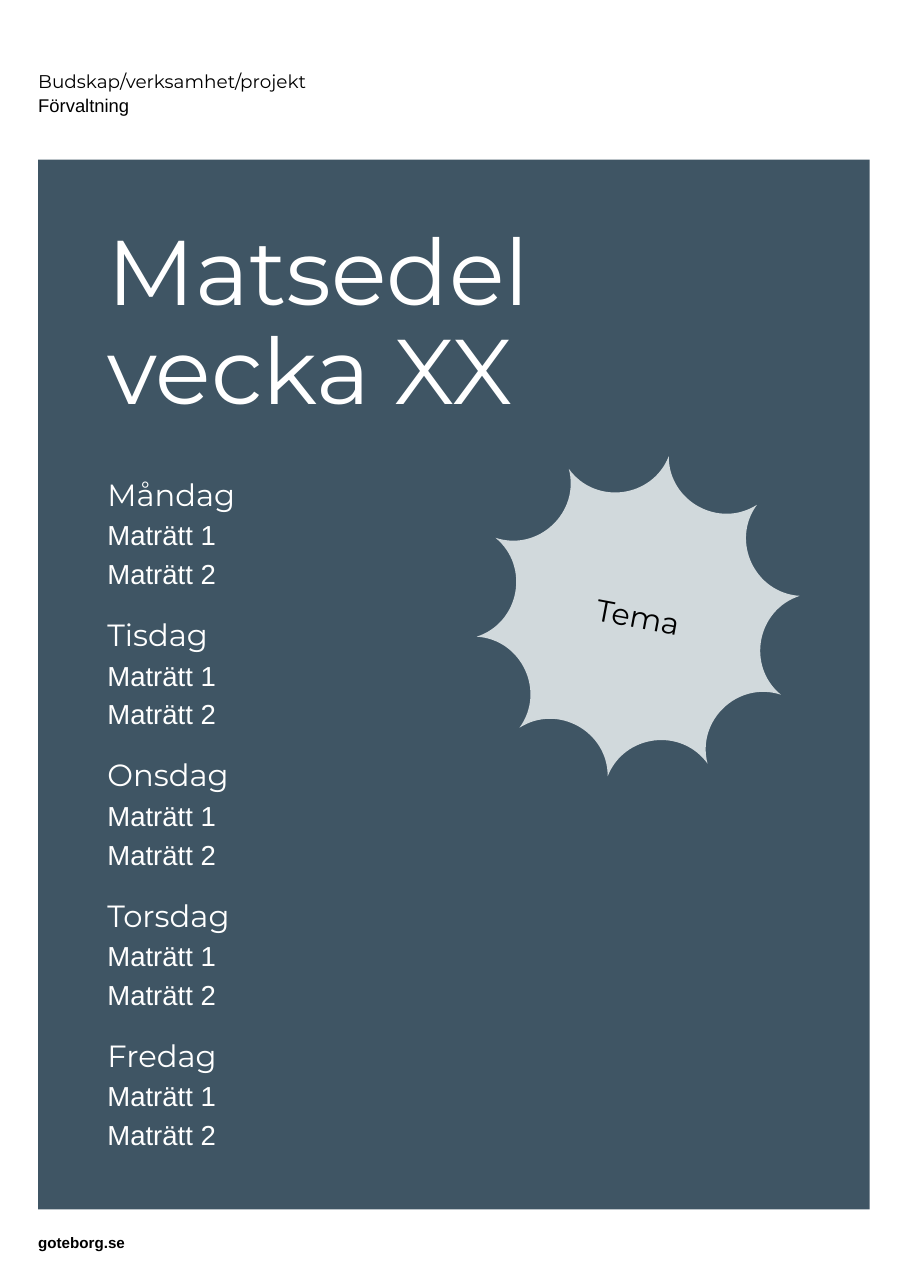
from math import cos, radians, sin

from lxml.etree import SubElement
from pptx import Presentation
from pptx.dml.color import RGBColor
from pptx.enum.shapes import MSO_SHAPE
from pptx.enum.text import MSO_ANCHOR as ANCHOR, PP_ALIGN as ALIGN
from pptx.oxml.ns import qn
from pptx.util import Inches, Pt

COLORS = {"panel": "3F5564", "star": "D1D9DC", "light": "FFFFFF", "dark": "000000"}
HEAD_FONT, BODY_FONT = "Montserrat", "Arial"
WIDTH, HEIGHT = Inches(11.69), Inches(16.53)
COL, ROW = WIDTH / 100, HEIGHT / 100
DAYS = ["Måndag", "Tisdag", "Onsdag", "Torsdag", "Fredag"]
DISHES = ["Maträtt 1", "Maträtt 2"]
TIPS = 10


def emu(box):
    left, top, width, height = box
    return [round(v) for v in (left * COL, top * ROW, width * COL, height * ROW)]


def paint(sp, color):
    sp.fill.solid()
    sp.fill.fore_color.rgb = RGBColor.from_string(COLORS[color])
    sp.line.fill.background()
    sp.shadow.inherit = False


def style(p, size, font, color, bold=False):
    for r in p.runs:
        r.font.size = Pt(size)
        r.font.name = font
        r.font.bold = bold
        r.font.color.rgb = RGBColor.from_string(COLORS[color])


def add_text(s, box, lines, anchor=ANCHOR.MIDDLE):
    tf = s.shapes.add_textbox(*emu(box)).text_frame
    tf.word_wrap = True
    tf.vertical_anchor = anchor
    tf.margin_left = tf.margin_top = tf.margin_right = tf.margin_bottom = 0
    tf.text = "\n".join(lines)
    return tf.paragraphs


def add_header(s, box):
    fonts = [HEAD_FONT, BODY_FONT]
    for p, font in zip(add_text(s, box, ["Budskap/verksamhet/projekt", "Förvaltning"]), fonts):
        p.line_spacing = Pt(22)
        style(p, 17, font, "dark")


def add_footer(s, box):
    style(add_text(s, box, ["goteborg.se"])[0], 14, BODY_FONT, "dark", True)


def add_days(s, box):
    lines = [line for day in DAYS for line in [day, *DISHES]]
    for i, p in enumerate(add_text(s, box, lines, ANCHOR.TOP)):
        is_day = p.text in DAYS
        if i:
            p.space_before = Pt(24 if is_day else 5.3)
        style(p, 28.3 if is_day else 25.4, HEAD_FONT if is_day else BODY_FONT, "light")


def add_star(s, x, y, radius):
    def point(share, angle):
        reach = radius * COL * share
        return (x * COL + reach * cos(radians(angle)), y * ROW + reach * sin(radians(angle)))

    step = 360 / TIPS
    builder = s.shapes.build_freeform(*point(1, 90))
    for i in range(TIPS):
        start = 90 + i * step
        end = start + step
        builder.add_line_segments(
            [point(0.73, start + 4), point(0.73, end - 4), point(1, end)], close=False)
    sp = builder.convert_to_shape()
    path = sp._element.find(".//" + qn("a:path"))
    lines = path.findall(qn("a:lnTo"))
    for i in range(0, len(lines), 3):
        curve = SubElement(path, qn("a:cubicBezTo"))
        for line in lines[i:i + 3]:
            curve.append(line[0])
            path.remove(line)
    SubElement(path, qn("a:close"))
    paint(sp, "star")
    sp.rotation = 10.8
    tf = sp.text_frame
    tf.word_wrap = True
    tf.vertical_anchor = ANCHOR.MIDDLE
    tf.margin_left = tf.margin_right = Inches(0.28)
    tf.margin_top = tf.margin_bottom = Inches(0.08)
    tf.text = "Tema"
    p = tf.paragraphs[0]
    p.alignment = ALIGN.CENTER
    style(p, 28, HEAD_FONT, "dark")


def add_menu(s, box):
    left, top, width, height = box
    paint(s.shapes.add_shape(MSO_SHAPE.RECTANGLE, *emu(box)), "panel")
    inner_left, inner_width = left + 7.6, width - 14.8
    add_days(s, (inner_left, top + 24.56, inner_width, 54.27))
    title = add_text(s, (inner_left, top + 4.84, inner_width, 15.97), ["Matsedel vecka XX"])[0]
    title.line_spacing = 0.9
    style(title, 84.8, HEAD_FONT, "light")
    add_star(s, left + 65.87, top + 35.45, 17.88)


def main():
    prs = Presentation()
    prs.slide_width, prs.slide_height = WIDTH, HEIGHT
    s = prs.slides.add_slide(prs.slide_layouts[6])
    margin = 4.19
    add_menu(s, (margin, 12.4, 91.27, 81.49))
    add_header(s, (margin, 5.69, 66.72, 2.9))
    add_footer(s, (margin, 95.77, 62.7, 1.45))
    prs.save("out.pptx")


if __name__ == "__main__":
    main()
